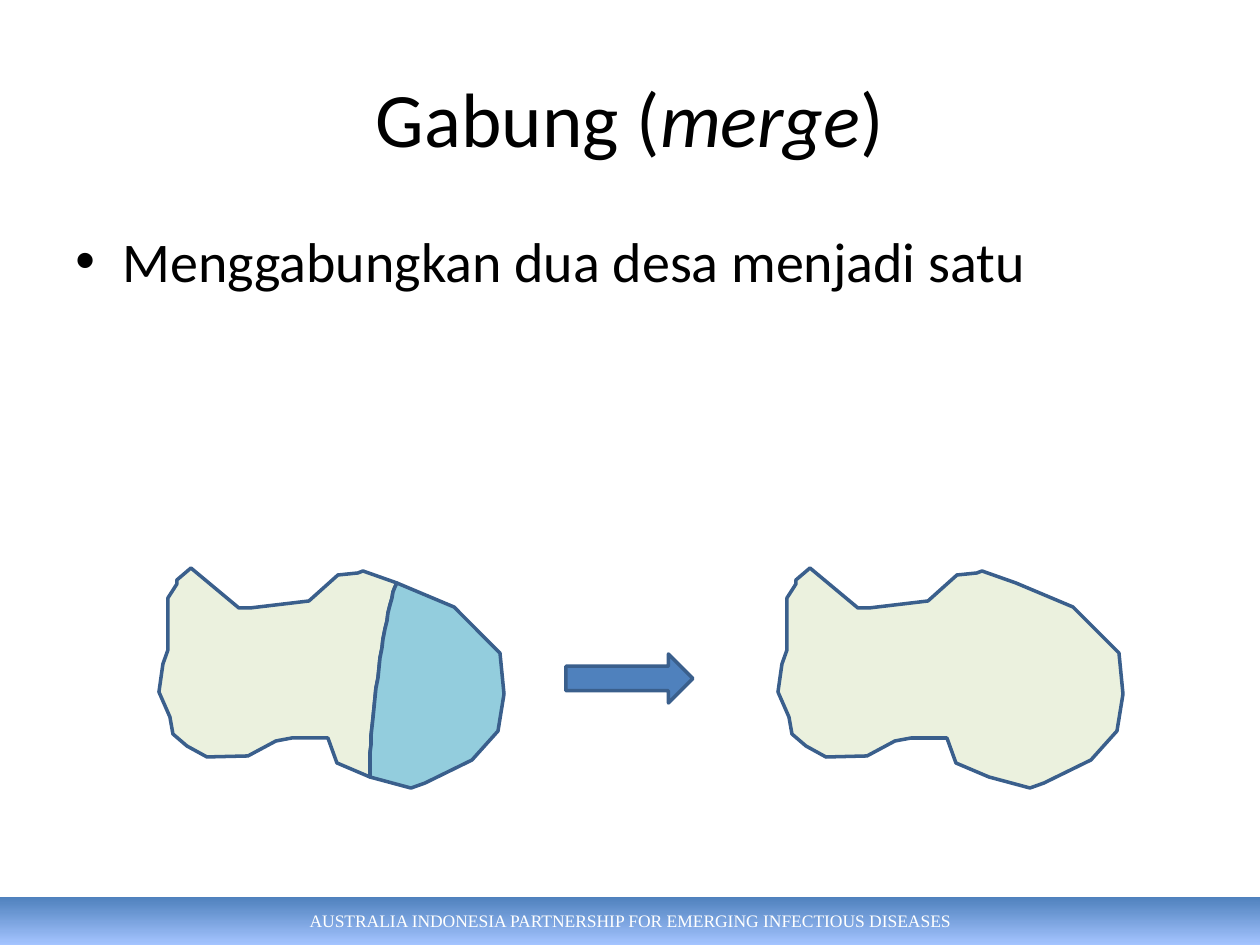
from pptx import Presentation
from pptx.dml.color import RGBColor
from pptx.enum.shapes import MSO_SHAPE
from pptx.enum.text import MSO_ANCHOR, PP_ALIGN
from pptx.oxml.ns import qn
from pptx.util import Emu, Pt
from lxml import etree

SCALE = 914400 / 126
WIDTH, HEIGHT = 1260, 945
RECTANGLE, ARROW = MSO_SHAPE.RECTANGLE, MSO_SHAPE.RIGHT_ARROW
TOP, MIDDLE = MSO_ANCHOR.TOP, MSO_ANCHOR.MIDDLE
LEFT, CENTER = PP_ALIGN.LEFT, PP_ALIGN.CENTER

BLACK = RGBColor(0x00, 0x00, 0x00)
WHITE = RGBColor(0xFF, 0xFF, 0xFF)
BLUE = RGBColor(0x4F, 0x81, 0xBD)
PALE_BLUE = RGBColor(0xA4, 0xC4, 0xFF)
OUTLINE = RGBColor(0x3A, 0x5F, 0x8C)
GREEN = RGBColor(0xEB, 0xF1, 0xDE)
AQUA = RGBColor(0x93, 0xCD, 0xDD)

TITLE = {"name": "Calibri", "size": Pt(44), "color": BLACK}
BODY = {"name": "Calibri", "size": Pt(32), "color": BLACK}
FOOTER = {"name": "Times New Roman", "size": Pt(10), "color": WHITE}

BORDER_CURVE = [(370, 777), (368, 743), (383, 612), (397, 583)]
WEST_SIDE = [
    (363, 571), (358, 573), (338, 575), (309, 601), (250, 608), (239, 608),
    (191, 568), (177, 580), (177, 584), (168, 598), (168, 650), (163, 664),
    (159, 692), (170, 717), (173, 734), (187, 746), (207, 757), (248, 756),
    (276, 741), (292, 738), (328, 738), (337, 763), (370, 777),
]
EAST_SIDE = [
    (411, 788), (425, 783), (472, 760), (498, 731), (504, 694), (500, 653),
    (454, 607), (397, 583),
]
MERGED_SHIFT = 619


def px(length):
    """Turn pixels into EMU."""
    return Emu(round(length * SCALE))


def curve_points(controls, steps=24):
    """Return points along a cubic curve in whole steps."""
    points = []
    for step in range(steps + 1):
        t = step / steps
        weights = ((1 - t) ** 3, 3 * t * (1 - t) ** 2, 3 * t * t * (1 - t), t ** 3)
        points.append(tuple(
            round(sum(w * c[axis] for w, c in zip(weights, controls)), 2)
            for axis in (0, 1)))
    return points


def write_text(shape, spans, style, align, anchor):
    """Fill a shape with one paragraph of (text, italic) spans."""
    frame = shape.text_frame
    frame.word_wrap = True
    frame.vertical_anchor = anchor
    para = frame.paragraphs[0]
    para.alignment = align
    for text, italic in spans:
        span = para.add_run()
        span.text = text
        span.font.italic = italic
        for key, value in style.items():
            if key == "color":
                span.font.color.rgb = value
            else:
                setattr(span.font, key, value)
    return para


def add_text(page, area, spans, style, align, anchor):
    """Add a text box and return its paragraph."""
    box = page.shapes.add_textbox(*map(px, area))
    return write_text(box, spans, style, align, anchor)


def add_bullet(para, indent):
    """Give a paragraph a round bullet with a hanging indent."""
    props = para._p.get_or_add_pPr()
    props.set("marL", str(px(indent)))
    props.set("indent", str(-px(indent)))
    etree.SubElement(props, qn("a:buFont")).set("typeface", "Arial")
    etree.SubElement(props, qn("a:buChar")).set("char", "•")


def paint(shape, color):
    """Give a shape a plain fill and the common outline."""
    shape.shadow.inherit = False
    shape.fill.solid()
    shape.fill.fore_color.rgb = color
    shape.line.color.rgb = OUTLINE
    shape.line.width = Pt(2)


def add_village(page, points, color, shift=0):
    """Draw a closed village area."""
    builder = page.shapes.build_freeform(*points[0], scale=SCALE)
    builder.add_line_segments(points[1:], close=True)
    paint(builder.convert_to_shape(px(shift), 0), color)


def add_footer(page, text):
    """Draw the gradient band at the foot of the page."""
    band = page.shapes.add_shape(RECTANGLE, *map(px, (0, 897, WIDTH, 48)))
    band.shadow.inherit = False
    band.line.fill.background()
    band.fill.gradient()
    band.fill.gradient_angle = 270
    for stop, color, position in zip(
            band.fill.gradient_stops, (BLUE, PALE_BLUE), (0, 1)):
        stop.color.rgb = color
        stop.position = position
    write_text(band, [(text, False)], FOOTER, CENTER, MIDDLE)


def main():
    """Build the slide and save it."""
    deck = Presentation()
    deck.slide_width, deck.slide_height = px(WIDTH), px(HEIGHT)
    page = deck.slides.add_slide(deck.slide_layouts[6])

    add_footer(page, "AUSTRALIA INDONESIA PARTNERSHIP FOR EMERGING INFECTIOUS DISEASES")
    add_text(page, (63, 38, 1134, 158),
             [("Gabung (", False), ("merge", True), (")", False)],
             TITLE, CENTER, MIDDLE)
    para = add_text(page, (63, 220, 1134, 624),
                    [("Menggabungkan dua desa menjadi satu", False)],
                    BODY, LEFT, TOP)
    add_bullet(para, 47)

    border = curve_points(BORDER_CURVE)
    add_village(page, WEST_SIDE + EAST_SIDE, GREEN, MERGED_SHIFT)
    add_village(page, WEST_SIDE[:-1] + border, GREEN)
    add_village(page, EAST_SIDE[:-1] + border[::-1], AQUA)
    paint(page.shapes.add_shape(ARROW, *map(px, (566, 654, 127, 49))), BLUE)

    deck.save("out.pptx")


if __name__ == "__main__":
    main()
